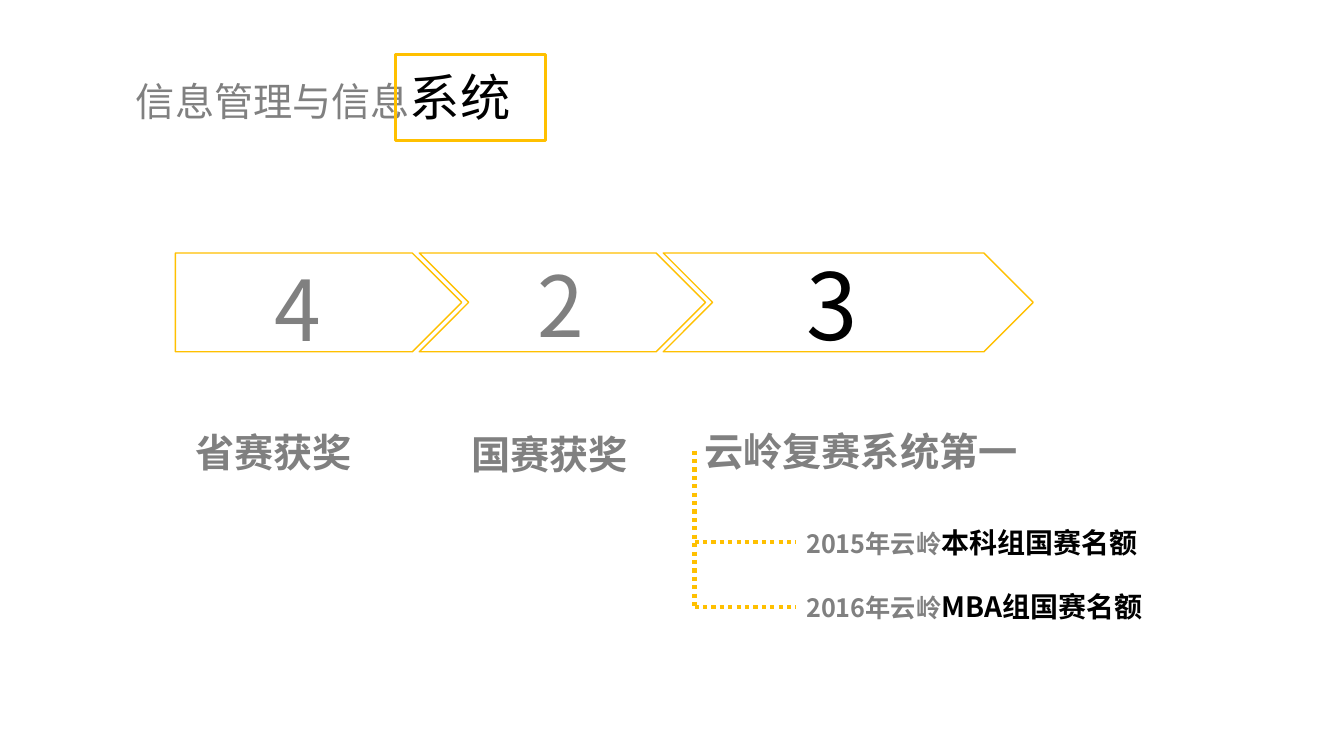
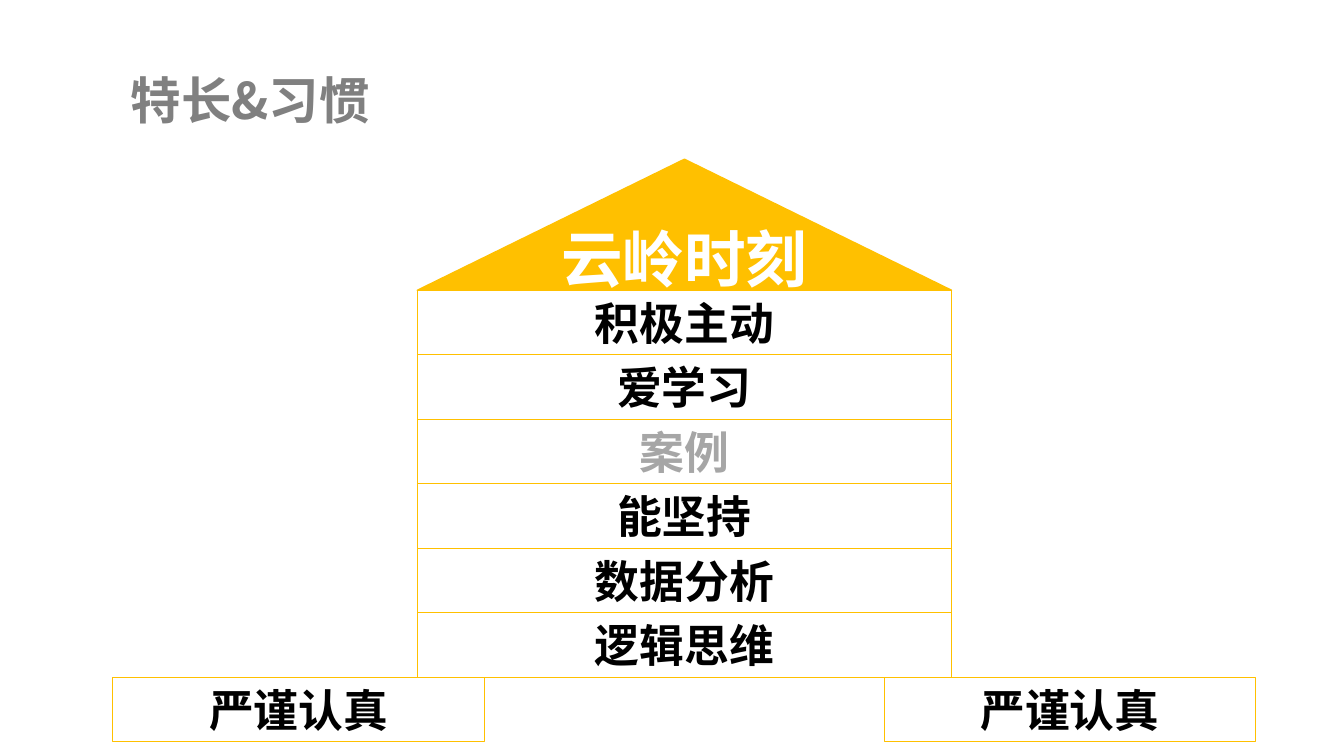
"""Build two slides: contest results as arrows, and strengths stacked as a house."""
from dataclasses import dataclass

from lxml import etree
from pptx import Presentation
from pptx import util as u
from pptx.dml.color import RGBColor
from pptx.enum import dml, shapes, text
from pptx.oxml.ns import qn

CELL = u.Inches(0.1)
COLUMNS, ROWS = 133.33, 75
FONT = "Noto Sans CJK SC"
GOLD = RGBColor(0xFF, 0xC0, 0x00)
GREY = RGBColor(0x80, 0x80, 0x80)
PALE = RGBColor(0xA6, 0xA6, 0xA6)
BLACK = RGBColor(0x00, 0x00, 0x00)
WHITE = RGBColor(0xFF, 0xFF, 0xFF)
SHAPE = shapes.MSO_SHAPE


@dataclass
class Box:
    """A rectangle in grid columns and rows."""
    left: float
    top: float
    width: float
    height: float

    def inner(self, left, top, width, height):
        """Return a box placed relative to this one."""
        return Box(self.left + left, self.top + top, width, height)

    def lengths(self):
        """Return left, top, width and height as slide lengths."""
        return [cells(side) for side in (self.left, self.top, self.width, self.height)]


def cells(count):
    """Turn grid cells into a slide length."""
    return u.Emu(round(count * CELL))


def write(item, *spans, bold=False, align=text.PP_ALIGN.LEFT,
          anchor=text.MSO_ANCHOR.TOP, wrap=True):
    """Write spans of (words, size, colour) as one paragraph."""
    frame = item.text_frame
    frame.word_wrap = wrap
    frame.auto_size = text.MSO_AUTO_SIZE.NONE
    frame.vertical_anchor = anchor
    para = frame.paragraphs[0]
    para.alignment = align
    for words, size, colour in spans:
        span = para.add_run()
        span.text = words
        span.font.size = u.Pt(size)
        span.font.bold = bold
        span.font.color.rgb = colour
        span.font.name = FONT
        east = etree.Element(qn("a:ea"), typeface=FONT)
        span.font._element.find(qn("a:latin")).addnext(east)


def add_text(page, box, *spans, **style):
    """Add a text box."""
    item = page.shapes.add_textbox(*box.lengths())
    write(item, *spans, **style)
    return item


def add_outline(page, kind, box, weight, fill=None):
    """Add a gold-lined shape, hollow unless a fill is given."""
    item = page.shapes.add_shape(kind, *box.lengths())
    item.shadow.inherit = False
    if fill is None:
        item.fill.background()
    else:
        item.fill.solid()
        item.fill.fore_color.rgb = fill
    item.line.color.rgb = GOLD
    item.line.width = u.Pt(weight)
    return item


def add_dotted(page, start, end, target=None):
    """Add a dotted line, joined to the left side of a target if given."""
    line = page.shapes.add_connector(
        shapes.MSO_CONNECTOR.STRAIGHT, *map(cells, start + end))
    line.line.color.rgb = GOLD
    line.line.width = u.Pt(3)
    line.line.dash_style = dml.MSO_LINE.ROUND_DOT
    etree.SubElement(line._element.spPr, qn("a:effectLst"))
    if target is not None:
        line.end_connect(target, 1)


def add_title(page, box, *spans, bold=False):
    """Add the slide's title."""
    add_text(page, box, *spans, bold=bold)


def add_steps(page, box):
    """Add the arrows with a count in each and a caption below."""
    pitch = 24.2
    steps = [
        (SHAPE.PENTAGON, 28.4, "4", 60, GREY, (8.9, 0), "省赛获奖", (1, 16.9)),
        (SHAPE.CHEVRON, 28.4, "2", 60, GREY, (10.7, -0.4), "国赛获奖", (4.2, 17.1)),
        (SHAPE.CHEVRON, 36.7, "3", 66, BLACK, (13.2, -1), "云岭复赛系统第一", (3.1, 16.8)),
    ]
    for index, (kind, width, count, size, colour, place, caption, below) in enumerate(steps):
        arrow = box.inner(index * pitch, 0, width, box.height)
        add_outline(page, kind, arrow, 1)
        add_text(page, arrow.inner(*place, 22, 12), (count, size, colour))
        add_text(page, arrow.inner(*below, width + 8 * (index == 2), 5.7),
                 (caption, 28, GREY), bold=True)


def add_branches(page, box):
    """Add a dotted trunk with one branch for each award."""
    branch, height = 10.1, 4.4
    awards = [("2015年云岭", "本科组国赛名额", 6.9), ("2016年云岭", "MBA组国赛名额", 13.3)]
    add_dotted(page, (box.left, box.top), (box.left, box.top + box.height))
    for year, award, top in awards:
        place = box.inner(branch, top, box.width - branch, height)
        label = add_text(page, place, (year, 18, GREY), (award, 20, BLACK), bold=True)
        middle = place.top + height / 2
        add_dotted(page, (box.left, middle), (place.left, middle), label)


def add_house(page, box, row):
    """Add a roof, a stack of rows and two base blocks beside the stack."""
    roof = 13
    base, reach = 36.9, 30.2
    centred = dict(bold=True, align=text.PP_ALIGN.CENTER, wrap=False)
    floors = ["积极主动", "爱学习", "案例", "能坚持", "数据分析", "逻辑思维"]
    blocks = [(box.inner(0, roof + index * row, box.width, row), words)
              for index, words in enumerate(floors)]
    ground = roof + len(floors) * row
    blocks += [(box.inner(left, ground, base, row), "严谨认真")
               for left in (-reach, box.width + reach - base)]
    for place, words in blocks:
        block = add_outline(page, SHAPE.RECTANGLE, place, 0.75)
        write(block, (words, 32, PALE if words == "案例" else BLACK), **centred)
    top = add_outline(page, SHAPE.ISOSCELES_TRIANGLE,
                      box.inner(0, 0, box.width, roof), 1, fill=GOLD)
    write(top, ("云岭时刻", 44, WHITE), anchor=text.MSO_ANCHOR.MIDDLE, **centred)


def build_results(page):
    """Build the slide of contest results."""
    add_steps(page, Box(17.4, 25.1, 85.1, 9.8))
    add_title(page, Box(12.5, 6.1, 48.3, 7.1),
              ("信息管理与信息", 28, GREY), ("系统", 36, BLACK))
    add_outline(page, SHAPE.RECTANGLE, Box(39.2, 5.4, 14.9, 8.5), 2.25)
    add_branches(page, Box(68.9, 44.7, 47.9, 15.5))


def build_strengths(page):
    """Build the slide of strengths and habits."""
    add_title(page, Box(12, 6.4, 48.3, 7.1), ("特长&习惯", 36, GREY), bold=True)
    add_house(page, Box(41.4, 15.8, 53, 57.8), 6.4)


def main():
    """Build and save the deck."""
    deck = Presentation()
    deck.slide_width, deck.slide_height = cells(COLUMNS), cells(ROWS)
    for build in (build_results, build_strengths):
        build(deck.slides.add_slide(deck.slide_layouts[6]))
    deck.save("out.pptx")


if __name__ == "__main__":
    main()
